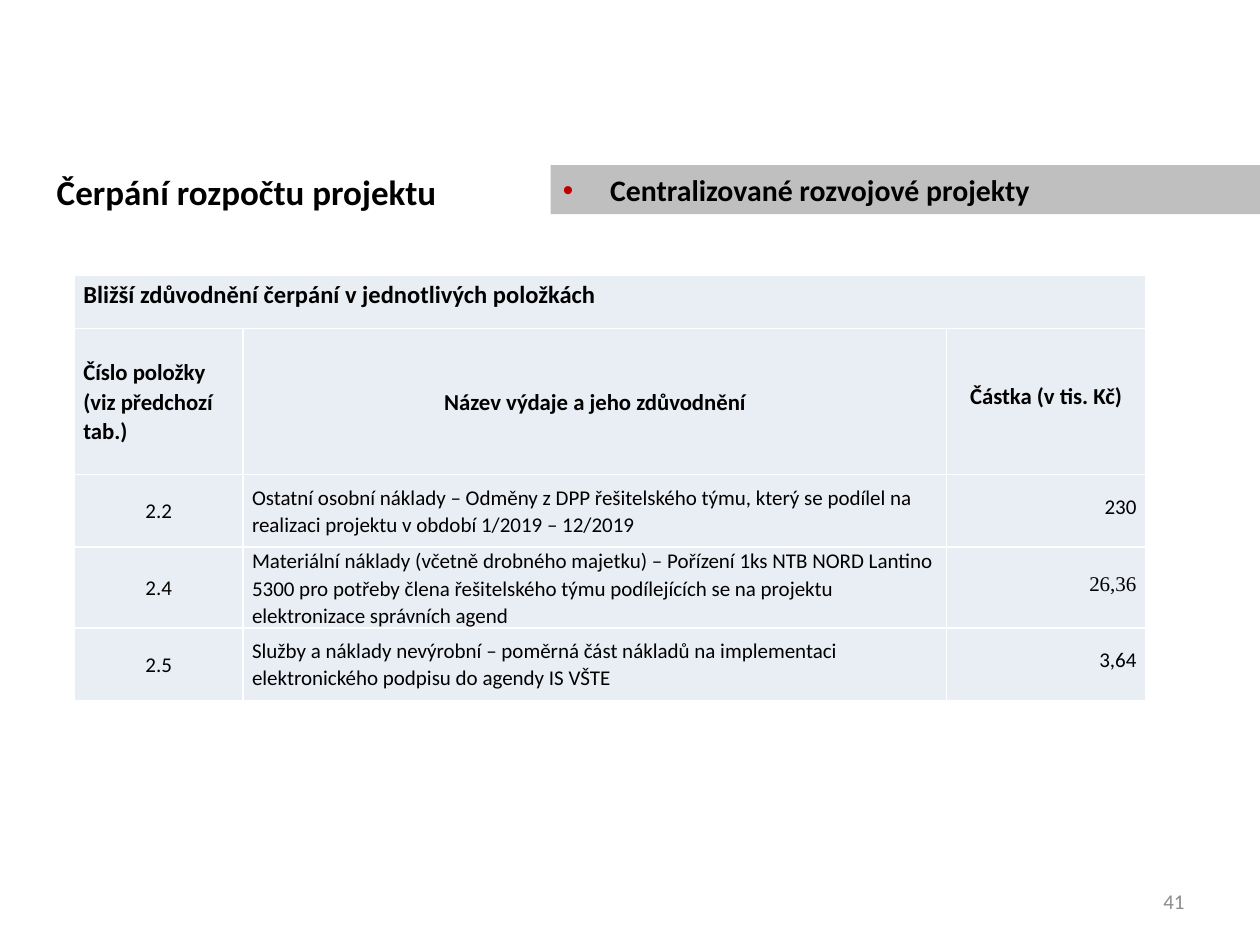
from dataclasses import dataclass

from pptx import Presentation, util as u
from pptx.dml.color import RGBColor
from pptx.enum import shapes, text
from pptx.oxml.ns import qn
from lxml import etree

LEFT, CENTER, RIGHT = text.PP_ALIGN.LEFT, text.PP_ALIGN.CENTER, text.PP_ALIGN.RIGHT


@dataclass(frozen=True)
class Theme:
    font: str = "Calibri"
    serif: str = "Times New Roman"
    ink: str = "000000"
    muted: str = "8C8C8C"
    band: str = "BFBFBF"
    bullet: str = "C00000"
    cell: str = "E9EDF4"
    border: str = "FFFFFF"
    title_size: int = 20
    band_size: int = 17
    caption_size: int = 14
    header_size: int = 13
    body_size: int = 12


class SlideBuilder:
    def __init__(self, slide, theme):
        self.slide = slide
        self.theme = theme

    def set_text(self, frame, words, size, bold=False, align=LEFT, color=None, font=None):
        frame.word_wrap = True
        paragraph = frame.paragraphs[0]
        paragraph.text = words
        paragraph.alignment = align
        paragraph.font.name = font or self.theme.font
        paragraph.font.size = u.Pt(size)
        paragraph.font.bold = bold
        paragraph.font.color.rgb = RGBColor.from_string(color or self.theme.ink)
        return paragraph

    def title(self, words, left, top, width, height):
        heading = self.slide.shapes.title
        heading.left, heading.top = u.Cm(left), u.Cm(top)
        heading.width, heading.height = u.Cm(width), u.Cm(height)
        frame = heading.text_frame
        frame.auto_size = text.MSO_AUTO_SIZE.NONE
        frame.vertical_anchor = text.MSO_ANCHOR.TOP
        self.set_text(frame, words, self.theme.title_size, bold=True)

    def band(self, words, left, top, width, height):
        """Grey strip with one bulleted line."""
        strip = self.slide.shapes.add_shape(
            shapes.MSO_SHAPE.RECTANGLE, u.Cm(left), u.Cm(top), u.Cm(width), u.Cm(height))
        strip.shadow.inherit = False
        strip.fill.solid()
        strip.fill.fore_color.rgb = RGBColor.from_string(self.theme.band)
        strip.line.fill.background()
        frame = strip.text_frame
        frame.vertical_anchor = text.MSO_ANCHOR.MIDDLE
        properties = frame.paragraphs[0]._p.get_or_add_pPr()
        hanging = u.Cm(0.95)
        properties.set("marL", str(hanging))
        properties.set("indent", str(-hanging))
        bullet_color = etree.SubElement(properties, qn("a:buClr"))
        etree.SubElement(bullet_color, qn("a:srgbClr"), val=self.theme.bullet)
        etree.SubElement(properties, qn("a:buFont"), typeface="Arial")
        etree.SubElement(properties, qn("a:buChar"), char="•")
        self.set_text(frame, words, self.theme.band_size, bold=True)

    def page_number(self, number, left, top, width, height):
        box = self.slide.shapes.add_textbox(u.Cm(left), u.Cm(top), u.Cm(width), u.Cm(height))
        box.text_frame.vertical_anchor = text.MSO_ANCHOR.MIDDLE
        self.set_text(box.text_frame, number, self.theme.body_size, align=RIGHT,
                      color=self.theme.muted)

    def table(self, left, top, columns, rows):
        """Add an empty table sized by its column widths and row heights."""
        grid = self.slide.shapes.add_table(
            len(rows), len(columns), u.Cm(left), u.Cm(top),
            u.Cm(sum(columns)), u.Cm(sum(rows))).table
        for column, width in zip(grid.columns, columns):
            column.width = u.Cm(width)
        for row, height in zip(grid.rows, rows):
            row.height = u.Cm(height)
        for cell in grid.iter_cells():
            self.style_cell(cell)
        return grid

    def style_cell(self, cell):
        cell.vertical_anchor = text.MSO_ANCHOR.MIDDLE
        cell.margin_left = cell.margin_right = u.Cm(0.18)
        cell.margin_top = cell.margin_bottom = 0
        properties = cell._tc.get_or_add_tcPr()
        for side in ("a:lnL", "a:lnR", "a:lnT", "a:lnB"):
            edge = etree.SubElement(properties, qn(side), w=str(u.Pt(1)))
            paint = etree.SubElement(edge, qn("a:solidFill"))
            etree.SubElement(paint, qn("a:srgbClr"), val=self.theme.border)
        cell.fill.solid()
        cell.fill.fore_color.rgb = RGBColor.from_string(self.theme.cell)

    def fill_cell(self, cell, words, size, spacing=1.07, **style):
        self.set_text(cell.text_frame, words, size, **style).line_spacing = spacing


def main():
    theme = Theme()
    presentation = Presentation()
    presentation.slide_width, presentation.slide_height = u.Cm(25.4), u.Cm(19.05)
    builder = SlideBuilder(
        presentation.slides.add_slide(presentation.slide_layouts[5]), theme)

    builder.title("Čerpání rozpočtu projektu", 0.89, 3.3, 22.86, 12.57)
    builder.band("Centralizované rozvojové projekty", 11.1, 3.33, 14.3, 0.99)
    builder.page_number("41", 18.21, 17.65, 5.92, 1.02)

    tight = u.Pt(10)
    budget = builder.table(1.5, 5.54, [3.4, 14.18, 4.01], [1.08, 2.95, 1.46, 1.46, 1.46])
    budget.cell(0, 0).merge(budget.cell(0, 2))
    builder.fill_cell(budget.cell(0, 0), "Bližší zdůvodnění čerpání v jednotlivých položkách",
                      theme.caption_size, tight, bold=True)

    headers = [
        ("Číslo položky (viz předchozí tab.)", LEFT, 1.07),
        ("Název výdaje a jeho zdůvodnění", CENTER, 1.07),
        ("Částka (v tis. Kč)", CENTER, tight),
    ]
    for column, (words, align, spacing) in enumerate(headers):
        builder.fill_cell(budget.cell(1, column), words, theme.header_size, spacing,
                          bold=True, align=align)

    expenses = [
        ("2.2", "Ostatní osobní náklady – Odměny z DPP řešitelského týmu, který se podílel "
                "na realizaci projektu v období 1/2019 – 12/2019", "230", theme.font),
        ("2.4", "Materiální náklady (včetně drobného majetku) – Pořízení 1ks NTB NORD Lantino "
                "5300 pro potřeby člena řešitelského týmu podílejících se na projektu "
                "elektronizace správních agend", "26,36", theme.serif),
        ("2.5", "Služby a náklady nevýrobní – poměrná část nákladů na implementaci "
                "elektronického podpisu do agendy IS VŠTE", "3,64", theme.font),
    ]
    for row, (item, reason, amount, amount_font) in enumerate(expenses, start=2):
        builder.fill_cell(budget.cell(row, 0), item, theme.body_size, align=CENTER)
        builder.fill_cell(budget.cell(row, 1), reason, theme.body_size)
        builder.fill_cell(budget.cell(row, 2), amount, theme.body_size, tight,
                          align=RIGHT, font=amount_font)

    presentation.save("out.pptx")


if __name__ == "__main__":
    main()
